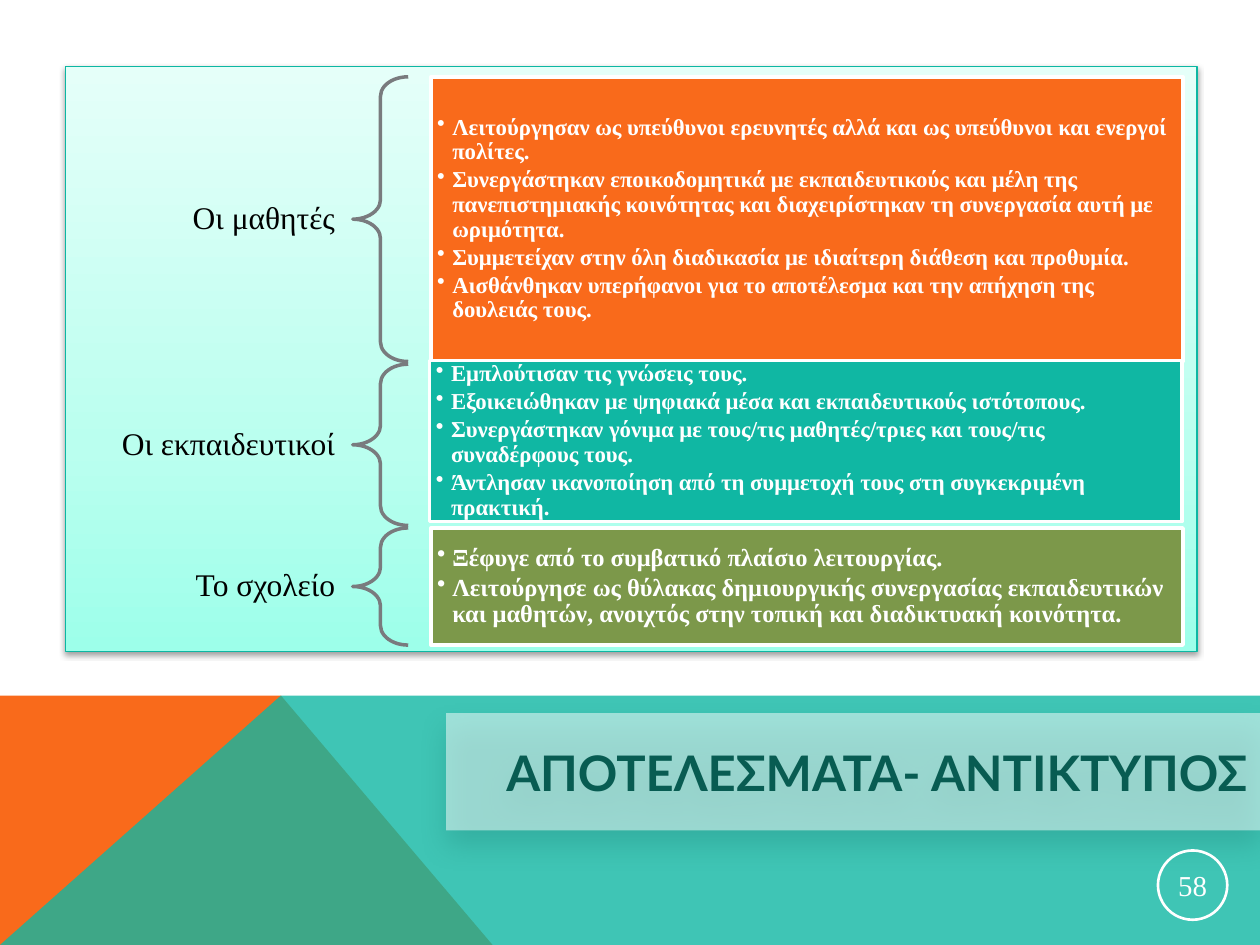
import copy

import lxml.etree
import pptx
import pptx.dml.color
import pptx.enum.shapes
import pptx.enum.text
import pptx.oxml.ns
import pptx.util
from pptx.util import Inches

RGBColor = pptx.dml.color.RGBColor
SHAPES = pptx.enum.shapes.MSO_SHAPE
ALIGN = pptx.enum.text.PP_ALIGN
qn = pptx.oxml.ns.qn

ORANGE = RGBColor(0xF9, 0x6A, 0x1B)
TEAL = RGBColor(0x10, 0xB7, 0xA3)
OLIVE = RGBColor(0x7C, 0x98, 0x4A)
DARK_TEAL = RGBColor(0x08, 0x5C, 0x52)
PANEL_LINE = RGBColor(0x0C, 0xB7, 0xA3)
GRAY = RGBColor(0x79, 0x7B, 0x7E)
WHITE = RGBColor(0xFF, 0xFF, 0xFF)
BLACK = RGBColor(0, 0, 0)
PANEL_STOPS = [
    (0, RGBColor(0x9D, 0xFF, 0xEA)),
    (0.35, RGBColor(0xBA, 0xFF, 0xEF)),
    (1, RGBColor(0xE5, 0xFF, 0xF9)),
]
SERIF = "Times New Roman"

GROUPS = [
    ("Οι μαθητές", ORANGE, 13, (3.42, 0.61, 5.97, 2.26), (0.61, 2.26), [
        "Λειτούργησαν ως υπεύθυνοι ερευνητές αλλά και ως υπεύθυνοι και ενεργοί πολίτες.",
        "Συνεργάστηκαν εποικοδομητικά με εκπαιδευτικούς και μέλη της πανεπιστημιακής "
        "κοινότητας και διαχειρίστηκαν τη συνεργασία αυτή με ωριμότητα.",
        "Συμμετείχαν στην όλη διαδικασία με ιδιαίτερη διάθεση και προθυμία.",
        "Αισθάνθηκαν υπερήφανοι για το αποτέλεσμα και την απήχηση της δουλειάς τους.",
    ]),
    ("Οι εκπαιδευτικοί", TEAL, 13, (3.41, 2.86, 5.97, 1.28), (2.89, 1.28), [
        "Εμπλούτισαν τις γνώσεις τους.",
        "Εξοικειώθηκαν με ψηφιακά μέσα και εκπαιδευτικούς ιστότοπους.",
        "Συνεργάστηκαν γόνιμα με τους/τις μαθητές/τριες και τους/τις συναδέρφους τους.",
        "Άντλησαν ικανοποίηση από τη συμμετοχή τους στη συγκεκριμένη πρακτική.",
    ]),
    ("Το σχολείο", OLIVE, 14, (3.42, 4.19, 5.97, 0.93), (4.19, 0.93), [
        "Ξέφυγε από το συμβατικό πλαίσιο λειτουργίας.",
        "Λειτούργησε ως θύλακας δημιουργικής συνεργασίας εκπαιδευτικών και μαθητών, "
        "ανοιχτός στην τοπική και διαδικτυακή κοινότητα.",
    ]),
]


def set_alpha(shape, percent):
    color = shape._element.spPr.find(qn("a:solidFill")).find(qn("a:srgbClr"))
    lxml.etree.SubElement(color, qn("a:alpha"), val=str(percent * 1000))


def add_shadow(shape, color, percent, blur, distance):
    shape.shadow.inherit = False
    effects = shape._element.spPr.find(qn("a:effectLst"))
    outer = lxml.etree.SubElement(
        effects, qn("a:outerShdw"), blurRad=str(pptx.util.Pt(blur)),
        dist=str(pptx.util.Pt(distance)), dir="5400000", rotWithShape="0")
    shade = lxml.etree.SubElement(outer, qn("a:srgbClr"), val=str(color))
    lxml.etree.SubElement(shade, qn("a:alpha"), val=str(percent * 1000))


def style(shape, fill=None, line=None, width=1):
    if fill is None:
        shape.fill.background()
    else:
        shape.fill.solid()
        shape.fill.fore_color.rgb = fill
    if line is None:
        shape.line.fill.background()
    else:
        shape.line.color.rgb = line
        shape.line.width = pptx.util.Pt(width)
    shape.shadow.inherit = False


def add_preset(slide, kind, box, **look):
    shape = slide.shapes.add_shape(kind, *map(Inches, box))
    style(shape, **look)
    return shape


def prepare_frame(shape, horizontal, vertical):
    frame = shape.text_frame
    frame.word_wrap = True
    frame.auto_size = pptx.enum.text.MSO_AUTO_SIZE.NONE
    frame.vertical_anchor = pptx.enum.text.MSO_ANCHOR.MIDDLE
    frame.margin_left = frame.margin_right = Inches(horizontal)
    frame.margin_top = frame.margin_bottom = Inches(vertical)
    return frame


def write(paragraph, text, size, color, align, font=SERIF, bold=False):
    paragraph.text = text
    paragraph.alignment = align
    paragraph.font.size = pptx.util.Pt(size)
    paragraph.font.name = font
    paragraph.font.bold = bold
    paragraph.font.color.rgb = color


def add_bullet(paragraph):
    properties = paragraph._p.get_or_add_pPr()
    properties.set("marL", str(Inches(0.12)))
    properties.set("indent", str(-Inches(0.12)))
    lxml.etree.SubElement(properties, qn("a:buChar"), char="•")


def add_band(slide, box):
    left, top, width, height = box
    bottom, peak = top + height, left + 2.23
    polygons = [
        (ORANGE, 100, [(left, bottom), (left, top), (peak, top), (left + 3.91, bottom)]),
        (TEAL, 80, [(left, bottom), (peak, top), (left + width, top), (left + width, bottom)]),
    ]
    for color, opacity, corners in polygons:
        points = [(Inches(x), Inches(y)) for x, y in corners]
        builder = slide.shapes.build_freeform(*points[0])
        builder.add_line_segments(points[1:], close=True)
        shape = builder.convert_to_shape()
        style(shape, fill=color)
        if opacity < 100:
            set_alpha(shape, opacity)


def add_panel(slide, box):
    panel = add_preset(slide, SHAPES.RECTANGLE, box, line=PANEL_LINE, width=0.75)
    panel.fill.gradient()
    panel.fill.gradient_angle = 90
    stop_list = panel._element.spPr.find(qn("a:gradFill")).find(qn("a:gsLst"))
    stop_list.append(copy.deepcopy(stop_list[-1]))
    for stop, (position, color) in zip(panel.fill.gradient_stops, PANEL_STOPS):
        stop.position = position
        stop.color.rgb = color
    add_shadow(panel, BLACK, 38, 3.1, 1.6)


def add_title(slide, box, text):
    title = slide.shapes.title
    title.left, title.top, title.width, title.height = map(Inches, box)
    style(title, fill=WHITE)
    set_alpha(title, 50)
    add_shadow(title, DARK_TEAL, 40, 16, 8)
    frame = prepare_frame(title, 0.1, 0.05)
    write(frame.paragraphs[0], text, 28, DARK_TEAL, ALIGN.RIGHT, "Lato", True)
    slide.shapes._spTree.append(title._element)


def add_page_number(slide, box, number):
    circle = add_preset(slide, SHAPES.OVAL, box, line=WHITE, width=1.5)
    frame = prepare_frame(circle, 0.01, 0.01)
    write(frame.paragraphs[0], number, 16.5, WHITE, ALIGN.CENTER)


def add_group(slide, box, label, color, size, brace_span, items):
    brace_top, brace_height = brace_span
    label_top = brace_top + brace_height / 2 - 0.175
    label_box = slide.shapes.add_textbox(*map(Inches, (0.61, label_top, 2.19, 0.35)))
    frame = prepare_frame(label_box, 0.14, 0.05)
    write(frame.paragraphs[0], label, 18, BLACK, ALIGN.RIGHT)
    frame.paragraphs[0].line_spacing = 0.9

    brace = add_preset(slide, SHAPES.LEFT_BRACE, (2.8, brace_top, 0.44, brace_height),
                       line=GRAY, width=2)
    brace.adjustments[0] = 0.35
    brace.adjustments[1] = 0.5

    card = add_preset(slide, SHAPES.RECTANGLE, box, fill=color, line=WHITE, width=2)
    frame = prepare_frame(card, 0.05, 0.05)
    for index, item in enumerate(items):
        paragraph = frame.add_paragraph() if index else frame.paragraphs[0]
        add_bullet(paragraph)
        write(paragraph, item, size, WHITE, ALIGN.LEFT, bold=True)
        paragraph.line_spacing = 0.9
        paragraph.space_after = pptx.util.Pt(2)


def main():
    presentation = pptx.Presentation()
    presentation.slide_width = Inches(10)
    presentation.slide_height = Inches(7.5)
    slide = presentation.slides.add_slide(presentation.slide_layouts[5])
    add_band(slide, (0, 5.52, 10, 1.98))
    add_panel(slide, (0.52, 0.53, 8.98, 4.64))
    add_title(slide, (3.54, 5.66, 6.46, 0.93), "ΑΠΟΤΕΛΕΣΜΑΤΑ- ΑΝΤΙΚΤΥΠΟΣ")
    add_page_number(slide, (9.19, 6.75, 0.55, 0.55), "58")
    for label, color, size, box, brace_span, items in GROUPS:
        add_group(slide, box, label, color, size, brace_span, items)
    presentation.save("out.pptx")


if __name__ == "__main__":
    main()
